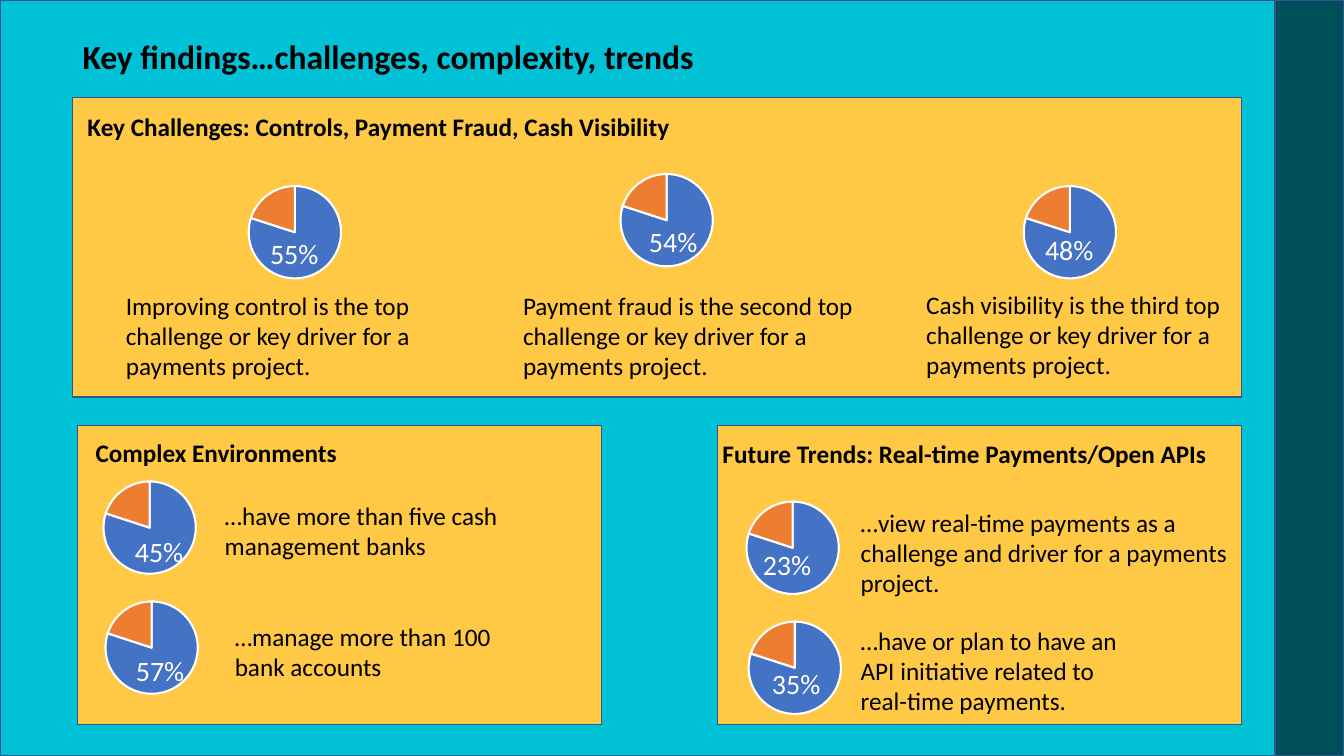
from dataclasses import dataclass

from lxml.etree import SubElement
from pptx import Presentation
from pptx.chart.data import CategoryChartData
from pptx.dml.color import RGBColor
from pptx.enum.chart import XL_CHART_TYPE
from pptx.enum.shapes import MSO_SHAPE
from pptx.enum.text import MSO_ANCHOR, MSO_AUTO_SIZE, PP_ALIGN
from pptx.oxml.ns import qn
from pptx.slide import Slide
from pptx.text.text import TextFrame
from pptx.util import Pt

FONT = "Calibri"
BLACK, WHITE = "000000", "FFFFFF"
TURQUOISE, DARK_TEAL, AMBER, OUTLINE = "00C1D5", "004F59", "FFC845", "325491"
SHARE_COLORS = ("4472C4", "ED7D31")
PIE_WIDTH, PIE_HEIGHT = 107.3, 85.7
PIE_DIAMETER = 66
PANEL_HEIGHT = 213.8


@dataclass(frozen=True)
class Box:
    left: float
    top: float
    width: float
    height: float

    def lengths(self) -> tuple[Pt, Pt, Pt, Pt]:
        return Pt(self.left), Pt(self.top), Pt(self.width), Pt(self.height)


@dataclass(frozen=True)
class Finding:
    percent: str
    statement: str
    pie_at: tuple[float, float]
    percent_at: tuple[float, float]
    statement_box: Box


@dataclass(frozen=True)
class Panel:
    heading: str
    frame: Box
    heading_box: Box
    findings: tuple[Finding, ...]


PANELS = (
    Panel(
        "Key Challenges: Controls, Payment Fraud, Cash Visibility",
        Box(51.8, 69.8, 835.2, PANEL_HEIGHT),
        Box(55.4, 76.3, 802, 29),
        (
            Finding("55%", "Improving control is the top challenge or key driver for a payments project.",
                    (157, 123.1), (185.8, 160.6), Box(82.8, 203.8, 268.6, 72.7)),
            Finding("54%", "Payment fraud is the second top challenge or key driver for a payments project.",
                    (422.6, 114.5), (456.5, 151.9), Box(366.5, 203.8, 286.6, 72.7)),
            Finding("48%", "Cash visibility is the third top challenge or key driver for a payments project.",
                    (710.6, 123.1), (739.4, 157.7), Box(654.5, 203, 239, 72.7)),
        ),
    ),
    Panel(
        "Future Trends: Real-time Payments/Open APIs",
        Box(512.6, 303.8, 374.4, PANEL_HEIGHT),
        Box(509, 309.6, 418.3, 29),
        (
            Finding("23%", "…view real-time payments as a challenge and driver for a payments project.",
                    (512.6, 348.5), (537.8, 382.3), Box(607.7, 358.6, 286.6, 72.7)),
            Finding("35%", "…have or plan to have an\nAPI initiative related to\nreal-time payments.",
                    (514.1, 434.2), (544.3, 467.3), Box(607.7, 442.8, 286.6, 72.7)),
        ),
    ),
    Panel(
        "Complex Environments",
        Box(55.4, 303.8, 374.4, PANEL_HEIGHT),
        Box(61.2, 308.9, 418.3, 29),
        (
            Finding("45%", "…have more than five cash management banks",
                    (53.3, 334.1), (89.3, 373), Box(153.4, 353.5, 286.6, 51.1)),
            Finding("57%", "…manage more than 100\nbank accounts",
                    (54.7, 419.8), (90, 458.6), Box(160.6, 439.9, 286.6, 51.1)),
        ),
    ),
)


def color(hex_code: str) -> RGBColor:
    return RGBColor.from_string(hex_code)


def add_rectangle(slide: Slide, box: Box, fill: str) -> None:
    rectangle = slide.shapes.add_shape(MSO_SHAPE.RECTANGLE, *box.lengths())
    rectangle.shadow.inherit = False
    rectangle.fill.solid()
    rectangle.fill.fore_color.rgb = color(fill)
    rectangle.line.color.rgb = color(OUTLINE)
    rectangle.line.width = Pt(1)


def write(frame: TextFrame, text: str, size: float, ink: str = BLACK, bold: bool = False) -> None:
    """Fill a frame with one left-aligned paragraph, breaking lines at newlines."""
    frame.word_wrap = True
    frame.auto_size = MSO_AUTO_SIZE.SHAPE_TO_FIT_TEXT
    frame.vertical_anchor = MSO_ANCHOR.TOP
    paragraph = frame.paragraphs[0]
    paragraph.alignment = PP_ALIGN.LEFT
    for number, line in enumerate(text.split("\n")):
        if number:
            paragraph.add_line_break()
        run = paragraph.add_run()
        run.text = line
        run.font.name = FONT
        run.font.size = Pt(size)
        run.font.bold = bold
        run.font.color.rgb = color(ink)


def add_text(slide: Slide, box: Box, text: str, size: float, ink: str = BLACK, bold: bool = False) -> TextFrame:
    frame = slide.shapes.add_textbox(*box.lengths()).text_frame
    write(frame, text, size, ink, bold)
    return frame


def add_pie(slide: Slide, left: float, top: float) -> None:
    shares = CategoryChartData()
    shares.categories = ["1", "2"]
    shares.add_series("Series 1", (80, 20))
    box = Box(left, top, PIE_WIDTH, PIE_HEIGHT)
    chart = slide.shapes.add_chart(XL_CHART_TYPE.PIE, *box.lengths(), shares).chart
    chart.has_title = False
    chart.has_legend = False
    chart.font.name = FONT
    chart.font.size = Pt(10)
    chart.font.color.rgb = color(BLACK)
    plot = chart.plots[0]
    plot.vary_by_categories = True
    for number, share_color in enumerate(SHARE_COLORS):
        slice_format = plot.series[0].points[number].format
        slice_format.fill.solid()
        slice_format.fill.fore_color.rgb = color(share_color)
        slice_format.line.color.rgb = color(WHITE)
        slice_format.line.width = Pt(1.5)
    center_plot(chart)


def center_plot(chart) -> None:
    """Give the pie a fixed diameter in the middle of its chart."""
    plot_area = chart.plots[0]._element.getparent()
    layout = plot_area.find(qn("c:layout"))
    if layout is None:
        layout = SubElement(plot_area, qn("c:layout"))
        plot_area.insert(0, layout)
    manual = SubElement(layout, qn("c:manualLayout"))
    width, height = PIE_DIAMETER / PIE_WIDTH, PIE_DIAMETER / PIE_HEIGHT
    settings = {
        "layoutTarget": "inner", "xMode": "edge", "yMode": "edge",
        "x": (1 - width) / 2, "y": (1 - height) / 2, "w": width, "h": height,
    }
    for name, value in settings.items():
        SubElement(manual, qn(f"c:{name}")).set("val", str(value))


def add_finding(slide: Slide, finding: Finding) -> None:
    add_pie(slide, *finding.pie_at)
    percent = add_text(slide, Box(*finding.percent_at, 95.8, 36), finding.percent, 20, WHITE)
    percent.auto_size = MSO_AUTO_SIZE.NONE
    percent.vertical_anchor = MSO_ANCHOR.BOTTOM
    add_text(slide, finding.statement_box, finding.statement, 18)


def add_panel(slide: Slide, panel: Panel) -> None:
    add_rectangle(slide, panel.frame, AMBER)
    add_text(slide, panel.heading_box, panel.heading, 18, bold=True)
    for finding in panel.findings:
        add_finding(slide, finding)


def add_title(slide: Slide) -> None:
    """Format the title placeholder and lift it above the backdrop."""
    title = slide.shapes.title
    title.left, title.top, title.width, title.height = Box(51.8, 22.3, 576, 36).lengths()
    write(title.text_frame, "Key findings…challenges, complexity, trends", 24, bold=True)
    slide.shapes._spTree.append(title._element)


def main() -> None:
    presentation = Presentation()
    presentation.slide_width, presentation.slide_height = Pt(960), Pt(540)
    slide = presentation.slides.add_slide(presentation.slide_layouts[5])
    add_rectangle(slide, Box(0, 0, 960, 540), TURQUOISE)
    add_title(slide)
    for panel in PANELS:
        add_panel(slide, panel)
    add_rectangle(slide, Box(910.8, 0, 49.2, 540), DARK_TEAL)
    presentation.save("out.pptx")


if __name__ == "__main__":
    main()
